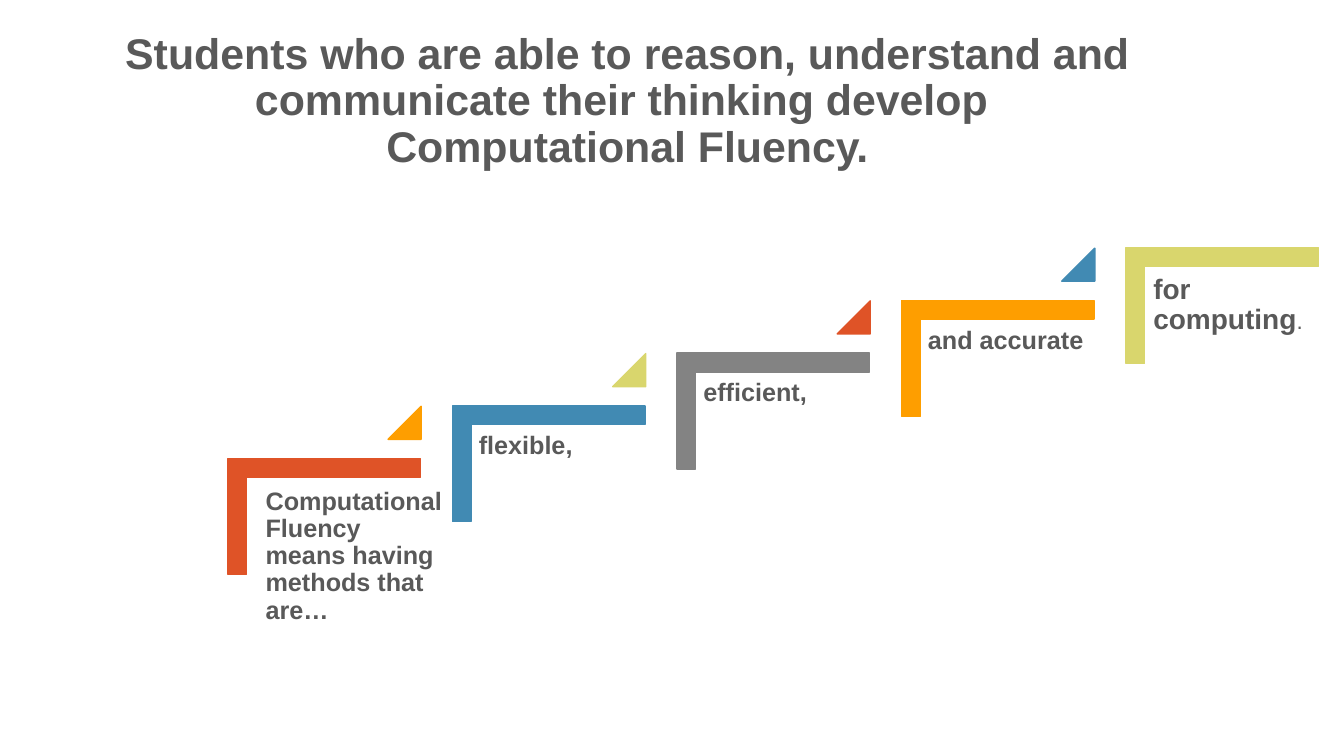
from pptx import Presentation, util as u
from pptx.dml import color
from pptx.enum import shapes, text

Pt = u.Pt
SHAPE = shapes.MSO_SHAPE
INK = "595959"
RED, BLUE, GREY, GOLD, LIME = "DF5327", "418AB3", "838383", "FE9E00", "D9D66D"
STEPS = [
    (RED, GOLD, "Computational Fluency means having methods that are…"),
    (BLUE, LIME, "flexible,"),
    (GREY, RED, "efficient,"),
    (GOLD, BLUE, "and accurate"),
    (LIME, None, "for computing"),
]


def rgb(code):
    """Turn a hex string into a colour."""
    return color.RGBColor.from_string(code)


def style(item, vals):
    """Set each attribute named in a dict."""
    for name, val in vals.items():
        setattr(item, name, val)


def write(para, words, size, bold=True):
    """Add one run of text to a paragraph."""
    run = para.add_run()
    run.text = words
    style(run.font, {"name": "Arial", "size": Pt(size), "bold": bold})
    run.font.color.rgb = rgb(INK)


def shape(group, kind, box, fill, ratios):
    """Add a flat shape with an outline of the same colour."""
    item = group.shapes.add_shape(kind, *map(Pt, box))
    item.shadow.inherit = False
    item.fill.solid()
    item.fill.fore_color.rgb = item.line.color.rgb = rgb(fill)
    item.line.width = Pt(1)
    for i, ratio in enumerate(ratios):
        item.adjustments[i] = ratio
    return item


def label(group, box, inset):
    """Add a wrapping text box and return its paragraph."""
    frame = group.shapes.add_textbox(*map(Pt, box)).text_frame
    sides = ("left", "top", "right", "bottom")
    style(frame, {f"margin_{side}": Pt(inset) for side in sides})
    frame.word_wrap = True
    para = frame.paragraphs[0]
    para.line_spacing = 0.9
    return para


def title(slide, box):
    """Place and fill the heading."""
    head = slide.shapes.title
    style(head, dict(zip(("left", "top", "width", "height"), map(Pt, box))))
    style(head.text_frame, {
        "vertical_anchor": text.MSO_ANCHOR.BOTTOM,
        "word_wrap": True,
        "auto_size": text.MSO_AUTO_SIZE.NONE,
    })
    para = head.text_frame.paragraphs[0]
    style(para, {"alignment": text.PP_ALIGN.CENTER, "line_spacing": 0.9})
    write(para, "Students who are able to reason, understand and "
                "communicate their thinking develop ", 30.6)
    para.add_line_break()
    write(para, "Computational Fluency.", 30.6)


def stairs(slide, box):
    """Draw the rising steps from the corner of the first one."""
    left, top, wide, high = box
    group = slide.shapes.add_group_shape()
    for i, (fill, tip, words) in enumerate(STEPS):
        first, last = i == 0, i == len(STEPS) - 1
        x, y = left + 160.4 * i, top - 37.65 * i
        bend = shape(group, SHAPE.CORNER, (x, y, wide, high), fill, (0.161, 0.161))
        bend.rotation = 90
        spot = (x - 5.8, y + 43.2, 140.4, 108.7) if first else (x - 13.9, y + 41.2, 124.6, 108.7)
        para = label(group, spot, 6 if last else 5.4)
        write(para, words, 20 if last else 18)
        if last:
            write(para, ".", 16, False)
        else:
            shape(group, SHAPE.ISOSCELES_TRIANGLE, (x + 87.1, y - 10, 23.6, 23.6), tip, (1,))


def main():
    """Build and save the slide."""
    deck = Presentation()
    style(deck, {"slide_width": Pt(960), "slide_height": Pt(540)})
    slide = deck.slides.add_slide(deck.slide_layouts[5])
    title(slide, (79.2, 31.7, 738, 94.3))
    stairs(slide, (190.1, 300.2, 82.8, 137.5))
    deck.save("out.pptx")


if __name__ == "__main__":
    main()
